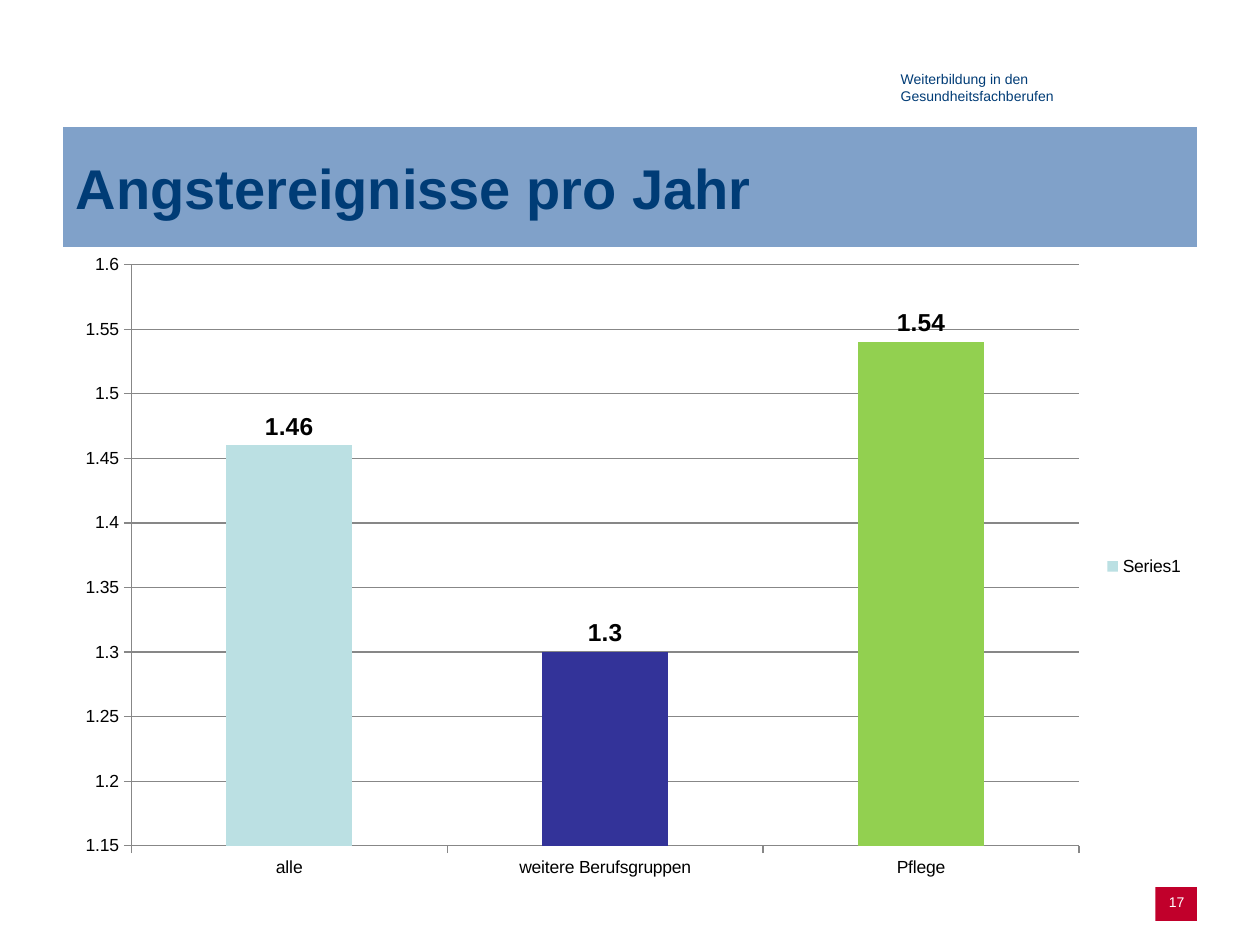
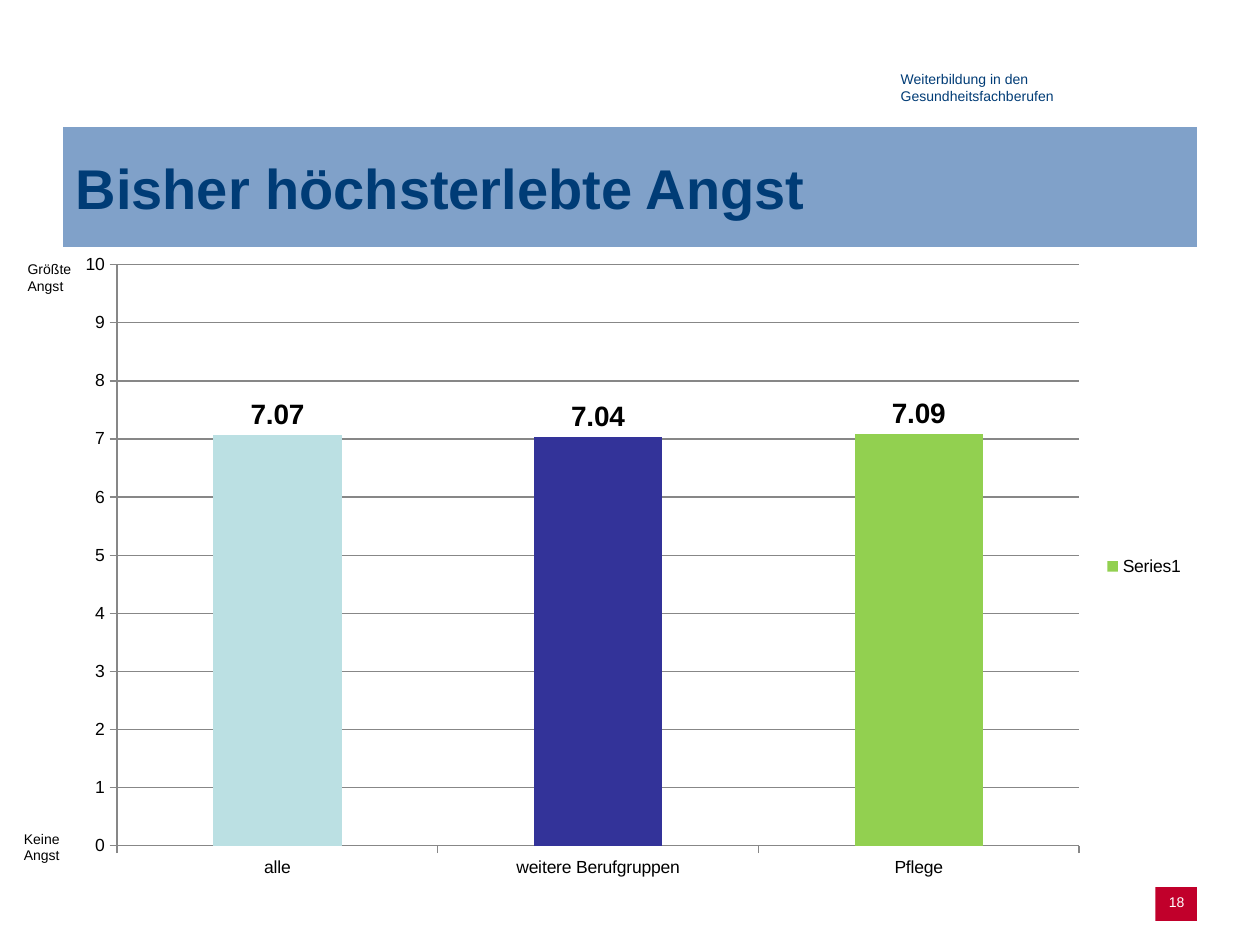
import pptx
import pptx.util
import pptx.chart.data
import pptx.dml.color
import pptx.enum.chart
import pptx.enum.shapes
import pptx.enum.text

WIDTH, HEIGHT = 10, 7.5
FONT = "Arial"
COLOURS = {
    "navy": "003C76", "band": "80A1C9", "red": "C1002B", "white": "FFFFFF",
    "black": "000000", "grid": "878787",
    "alle": "BBE0E3", "weitere": "333399", "pflege": "92D050",
}
BAR_COLOURS = ("alle", "weitere", "pflege")

# Boxes in inches: left, top, width, height
MARGIN = 0.5
CONTENT_WIDTH = WIDTH - 2 * MARGIN
HEADER_BOX = (7.05, 0.51, 2.44, 0.37)
TITLE_BOX = (MARGIN, 1.01, CONTENT_WIDTH, 0.95)
CHART_BOX = (MARGIN, 1.92, CONTENT_WIDTH, 5.15)
NUMBER_BOX = (WIDTH - MARGIN - 0.33, 7.04, 0.33, 0.27)
# Scale-end labels relative to the chart box
SCALE_LABELS = (("Keine Angst", -0.41, 4.62), ("Größte Angst", -0.38, 0.1))
SCALE_LABEL_SIZE = (0.55, 0.37)

SLIDES = (
    dict(title="Angstereignisse pro Jahr", number=17,
         categories=("alle", "weitere Berufsgruppen", "Pflege"),
         values=(1.46, 1.3, 1.54), series_colour="alle", label_size=14,
         scale=dict(minimum_scale=1.15, maximum_scale=1.6, major_unit=0.05)),
    dict(title="Bisher höchsterlebte Angst", number=18,
         categories=("alle", "weitere Berufgruppen", "Pflege"),
         values=(7.07, 7.04, 7.09), series_colour="pflege", label_size=16,
         scale=dict(minimum_scale=0, maximum_scale=10, major_unit=1),
         scale_labels=SCALE_LABELS),
)


def inches(box):
    return [pptx.util.Inches(length) for length in box]


def rgb(name):
    return pptx.dml.color.RGBColor.from_string(COLOURS[name])


def fill(target, colour):
    target.fill.solid()
    target.fill.fore_color.rgb = rgb(colour)


def set_attributes(target, **values):
    for attribute, value in values.items():
        setattr(target, attribute, value)


def set_font(font, size, colour, bold=False):
    set_attributes(font, name=FONT, size=pptx.util.Pt(size), bold=bold)
    font.color.rgb = rgb(colour)


def write(shape, text, size, colour, bold=False, align="LEFT", anchor="TOP"):
    set_attributes(shape.text_frame, text=text, word_wrap=True,
                   auto_size=pptx.enum.text.MSO_AUTO_SIZE.NONE,
                   vertical_anchor=getattr(pptx.enum.text.MSO_ANCHOR, anchor))
    paragraph = shape.text_frame.paragraphs[0]
    paragraph.alignment = getattr(pptx.enum.text.PP_ALIGN, align)
    set_font(paragraph.runs[0].font, size, colour, bold)


def add_label(slide, box, text, colour):
    write(slide.shapes.add_textbox(*inches(box)), text, 8, colour)


def add_title(slide, box, text):
    title = slide.shapes.title
    left, top, width, height = inches(box)
    set_attributes(title, left=left, top=top, width=width, height=height)
    fill(title, "band")
    write(title, text, 32, "navy", bold=True, anchor="MIDDLE")


def add_page_number(slide, box, number):
    badge = slide.shapes.add_shape(
        pptx.enum.shapes.MSO_SHAPE.RECTANGLE, *inches(box))
    badge.shadow.inherit = False
    fill(badge, "red")
    badge.line.fill.background()
    badge.text_frame.margin_left = 0
    write(badge, str(number), 8, "white", align="RIGHT")


def style_line(line):
    line.color.rgb = rgb("grid")
    line.width = pptx.util.Pt(0.75)


def add_bar_chart(slide, box, categories, values, series_colour, label_size, scale):
    bar_data = pptx.chart.data.CategoryChartData()
    bar_data.categories = categories
    bar_data.add_series("Series1", values)
    chart = slide.shapes.add_chart(
        pptx.enum.chart.XL_CHART_TYPE.COLUMN_CLUSTERED, *inches(box), bar_data).chart
    chart.has_title = False
    set_font(chart.font, 10, "black")

    # Legend
    chart.has_legend = True
    set_attributes(chart.legend, include_in_layout=False,
                   position=pptx.enum.chart.XL_LEGEND_POSITION.RIGHT)

    # Axes and gridlines
    for axis in (chart.category_axis, chart.value_axis):
        axis.major_tick_mark = pptx.enum.chart.XL_TICK_MARK.OUTSIDE
        style_line(axis.format.line)
    set_attributes(chart.value_axis, has_major_gridlines=True, **scale)
    style_line(chart.value_axis.major_gridlines.format.line)

    # Bars, one colour per group
    plot = chart.plots[0]
    set_attributes(plot, vary_by_categories=False, gap_width=150)
    bars = plot.series[0]
    fill(bars.format, series_colour)
    for index, colour in enumerate(BAR_COLOURS):
        if colour != series_colour:
            fill(bars.points[index].format, colour)

    # Values above the bars
    labels = bars.data_labels
    set_attributes(labels, show_value=True,
                   position=pptx.enum.chart.XL_LABEL_POSITION.OUTSIDE_END)
    set_font(labels.font, label_size, "black", bold=True)


def add_chart_slide(deck, title, number, scale_labels=(), **chart_values):
    slide = deck.slides.add_slide(deck.slide_layouts.get_by_name("Title Only"))
    add_label(slide, HEADER_BOX, "Weiterbildung in den Gesundheitsfachberufen", "navy")
    add_title(slide, TITLE_BOX, title)
    add_page_number(slide, NUMBER_BOX, number)
    for text, across, down in scale_labels:
        corner = (CHART_BOX[0] + across, CHART_BOX[1] + down)
        add_label(slide, corner + SCALE_LABEL_SIZE, text, "black")
    add_bar_chart(slide, CHART_BOX, **chart_values)


def main():
    deck = pptx.Presentation()
    deck.slide_width, deck.slide_height = inches((WIDTH, HEIGHT))
    for content in SLIDES:
        add_chart_slide(deck, **content)
    deck.save("out.pptx")


if __name__ == "__main__":
    main()
